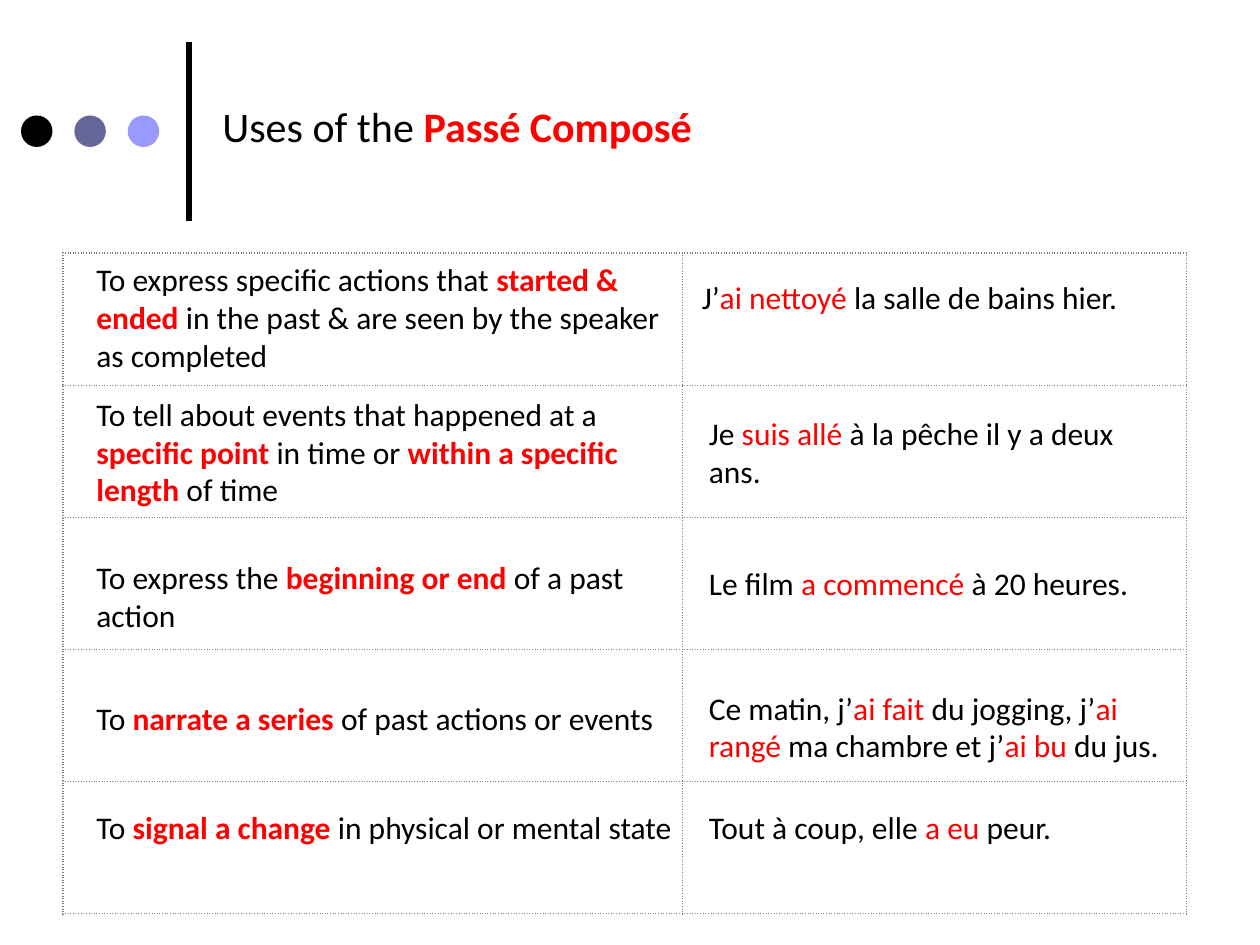
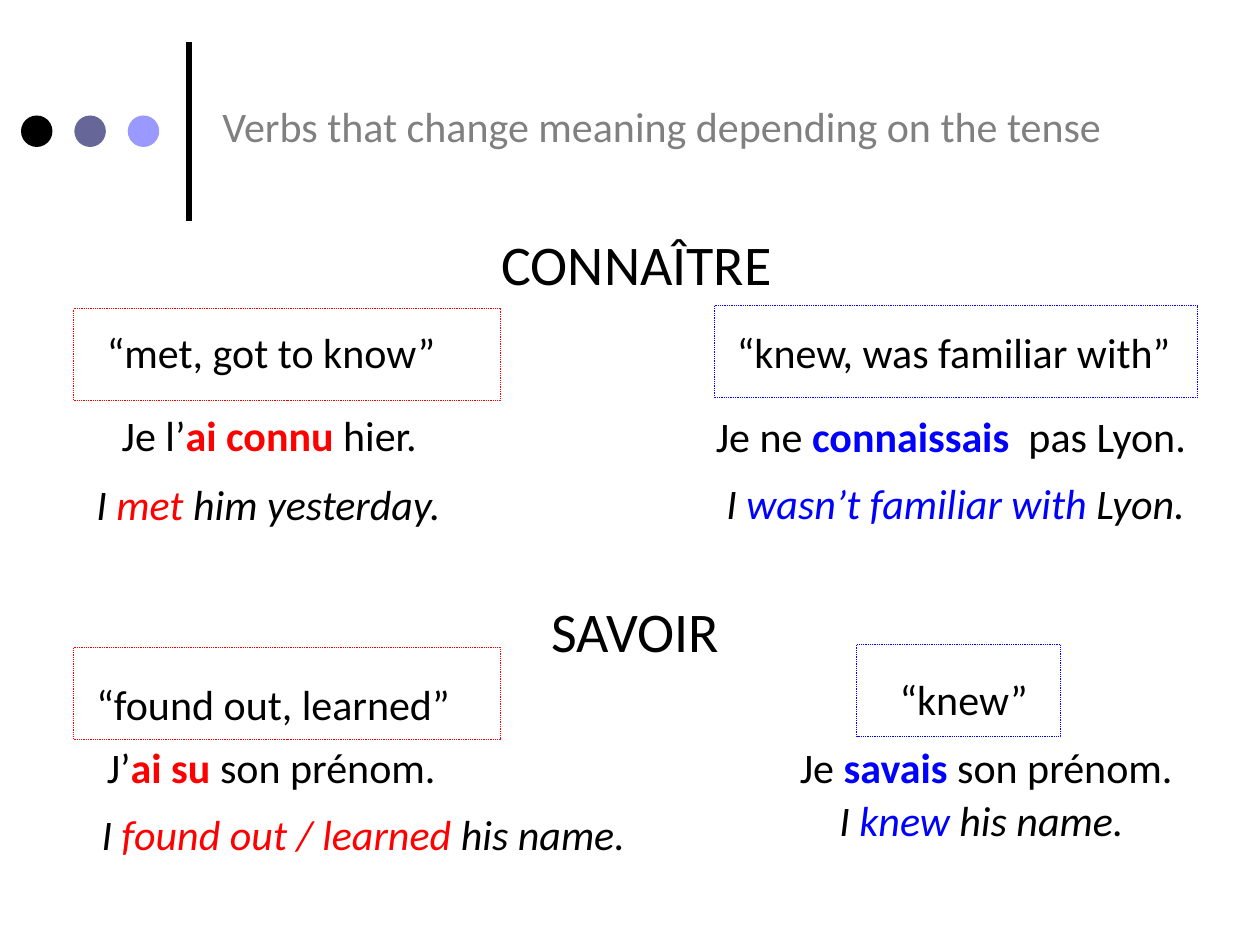
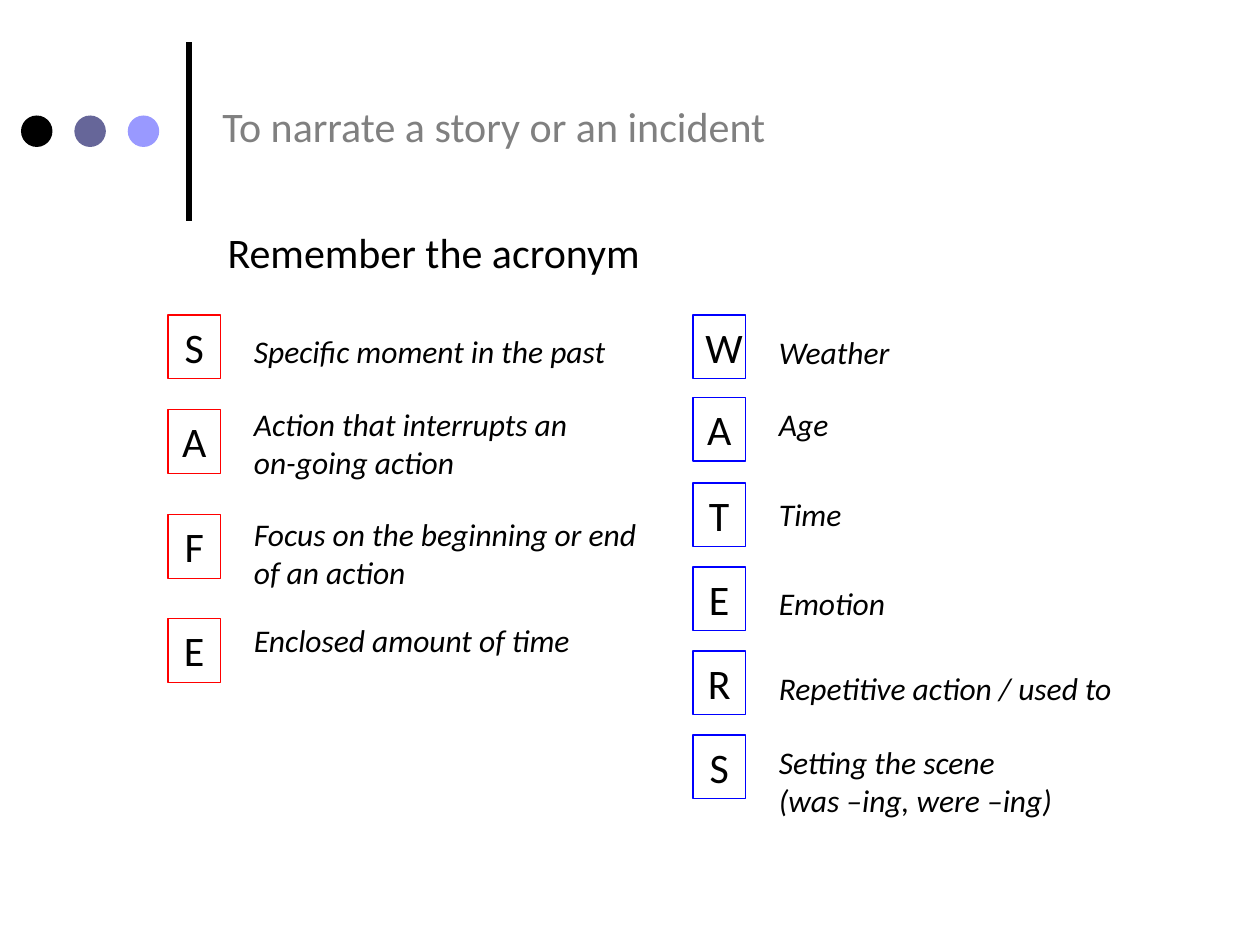
from lxml import etree
from pptx import Presentation
from pptx.dml.color import RGBColor
from pptx.enum import dml, shapes, text
from pptx.oxml import ns
from pptx.util import Pt

COLORS = {"black": "000000", "slate": "666699", "lilac": "9999FF",
          "gray": "808080", "past": "FF0000", "imperfect": "0000FF"}
FONT = "Calibri"

# Content: parts between bars are highlighted
USES_TITLE = "Uses of the |Passé Composé"
USES = [  # (top, use), (left, top, example)
    ((145, "To express specific actions that |started & ended |in the past & are seen "
           "by the speaker as completed"),
     (394, 155.5, "J’|ai nettoyé |la salle de bains hier.")),
    ((222, "To tell about events that happened at a |specific point |in time or "
           "|within a specific length |of time"),
     (398, 233, "Je |suis allé |à la pêche il y a deux ans.")),
    ((315.5, "To express the |beginning or end |of a past action"),
     (398, 319, "Le film |a commencé |à 20 heures.")),
    ((396, "To |narrate a series |of past actions or events"),
     (398, 390, "Ce matin, j’|ai fait |du jogging, j’|ai rangé |ma chambre et j’|ai bu |du jus.")),
    ((458, "To |signal a change |in physical or mental state"),
     (398, 458, "Tout à coup, elle |a eu |peur.")),
]
USES_GRID = {"left": 36, "top": 144.7, "columns": (354, 288), "row": 75.5}

VERBS_TITLE = "Verbs that change meaning depending on the tense"
VERBS = [  # infinitive, left, top, centered
    ("CONNAÎTRE", 279.5, 108.5, False),
    ("SAVOIR", 258, 318, True),
]
MEANINGS = [  # tense, frame (left, top, width), then (left, top, width, words) for each line
    ("past", (42, 176.5, 244), (54, 183, 264, "“met, got to know”"),
     (62.5, 230.5, 213, "Je l’|ai connu |hier."),
     (48, 270, 234, "I |met |him yesterday.")),
    ("imperfect", (408, 174.7, 276), (414, 183, 270, "“knew, was familiar with”"),
     (402, 231, 318, "Je ne |connaissais | pas Lyon."),
     (408, 269.5, 294, "I |wasn’t familiar with |Lyon.")),
    ("past", (42, 370, 244), (48, 384, 264, "“found out, learned”"),
     (54, 420, 232, "J’|ai su |son prénom."),
     (51, 458.5, 320, "I |found out / learned |his name.")),
    ("imperfect", (489.5, 368.5, 116.5), (507, 381.5, 108, "“knew”"),
     (450, 420, 246, "Je |savais| son prénom."),
     (472.5, 450.5, 192, "I |knew |his name.")),
]
FRAME_HEIGHT = 52.5

STORY_TITLE = "To narrate a story or an incident"
REMINDER = "Remember the acronym"
ACRONYMS = [  # tense, left, then (letter, letter top, meaning top, meaning)
    ("past", 96, [
        ("S", 180, 186, "Specific moment in the past"),
        ("A", 234, 228, "Action that interrupts an\non-going action"),
        ("F", 294, 291, "Focus on the beginning or end of an action"),
        ("E", 353.5, 351.5, "Enclosed amount of time")]),
    ("imperfect", 396, [
        ("W", 180, 187, "Weather"),
        ("A", 227, 228, "Age"),
        ("T", 276, 279.5, "Time"),
        ("E", 324, 330, "Emotion"),
        ("R", 372, 379, "Repetitive action / used to"),
        ("S", 420, 421, "Setting the scene\n(was –ing, were –ing)")]),
]


def rgb(name):
    return RGBColor.from_string(COLORS[name])


def write(shape, words, size, color="black", accent="past", bold_accent=False,
          italic=False, before=None, spacing=None, centered=False):
    frame = shape.text_frame
    frame.word_wrap = True
    frame.vertical_anchor = text.MSO_ANCHOR.TOP
    frame.auto_size = text.MSO_AUTO_SIZE.SHAPE_TO_FIT_TEXT
    for i, line in enumerate(words.split("\n")):
        paragraph = frame.add_paragraph() if i else frame.paragraphs[0]
        paragraph.alignment = text.PP_ALIGN.CENTER if centered else text.PP_ALIGN.LEFT
        if before is not None:
            paragraph.space_before = Pt(before)
        if spacing is not None:
            paragraph.line_spacing = spacing
        for j, part in enumerate(line.split("|")):
            marked = j % 2 == 1
            run = paragraph.add_run()
            run.text = part
            run.font.name = FONT
            run.font.size = Pt(size)
            run.font.bold = marked and bold_accent
            run.font.italic = italic
            run.font.color.rgb = rgb(accent if marked else color)


def add_words(slide, left, top, width, height, words, size, **style):
    box = slide.shapes.add_textbox(Pt(left), Pt(top), Pt(width), Pt(height))
    write(box, words, size, **style)


def add_outline(slide, left, top, width, height, color, weight):
    box = slide.shapes.add_shape(shapes.MSO_SHAPE.RECTANGLE,
                                 Pt(left), Pt(top), Pt(width), Pt(height))
    box.shadow.inherit = False
    box.fill.background()
    box.line.color.rgb = rgb(color)
    box.line.width = Pt(weight)
    return box


def add_slide(deck, title, color="gray"):
    """Add a slide with the shared bar, dots and title."""
    slide = deck.slides.add_slide(deck.slide_layouts[6])
    bar = slide.shapes.add_connector(shapes.MSO_CONNECTOR.STRAIGHT,
                                     Pt(108), Pt(126), Pt(108), Pt(24))
    bar.line.color.rgb = rgb("black")
    bar.line.width = Pt(3)
    etree.SubElement(bar._element.spPr, ns.qn("a:effectLst"))
    for i, dot_color in enumerate(("black", "slate", "lilac")):
        dot = slide.shapes.add_shape(shapes.MSO_SHAPE.OVAL,
                                     Pt(12 + 30.5 * i), Pt(66), Pt(18), Pt(18))
        dot.shadow.inherit = False
        dot.fill.solid()
        dot.fill.fore_color.rgb = rgb(dot_color)
        dot.line.fill.background()
    add_words(slide, 120, 54, 576, 36, title, 24, color=color, bold_accent=True)
    return slide


def dot_borders(cell):
    properties = cell._tc.get_or_add_tcPr()
    for i, side in enumerate(("lnL", "lnR", "lnT", "lnB")):
        line = etree.Element(ns.qn("a:" + side), w=str(Pt(1)))
        fill = etree.SubElement(line, ns.qn("a:solidFill"))
        etree.SubElement(fill, ns.qn("a:srgbClr"), val=COLORS["gray"])
        etree.SubElement(line, ns.qn("a:prstDash"), val="dot")
        properties.insert(i, line)


def build_uses(deck):
    slide = add_slide(deck, USES_TITLE, "black")
    columns, row_height = USES_GRID["columns"], USES_GRID["row"]
    grid = slide.shapes.add_table(
        len(USES), len(columns), Pt(USES_GRID["left"]), Pt(USES_GRID["top"]),
        Pt(sum(columns)), Pt(row_height * len(USES))).table
    grid.first_row = grid.horz_banding = False
    for column, width in zip(grid.columns, columns):
        column.width = Pt(width)
    for row in grid.rows:
        row.height = Pt(row_height)
    for cell in grid.iter_cells():
        cell.fill.background()
        dot_borders(cell)
    for (top, use), _ in USES:
        add_words(slide, 48, top, 343.5, 29, use, 18, bold_accent=True)
    for _, (left, top, example) in USES:
        add_words(slide, left, top, 272, 29, example, 18)


def build_verbs(deck):
    slide = add_slide(deck, VERBS_TITLE)
    for infinitive, left, top, centered in VERBS:
        add_words(slide, left, top, 210, 60, infinitive, 32,
                  before=6, spacing=1.5, centered=centered)
    for tense, (left, top, width), *lines in MEANINGS:
        for i, (x, y, line_width, words) in enumerate(lines):
            translation = i == 2
            add_words(slide, x, y, line_width, 36, words, 24, accent=tense, before=6,
                      bold_accent=not translation, italic=translation)
        frame = add_outline(slide, left, top, width, FRAME_HEIGHT, tense, 0.5)
        frame.line.dash_style = dml.MSO_LINE.ROUND_DOT


def build_story(deck):
    slide = add_slide(deck, STORY_TITLE)
    add_words(slide, 123, 111.5, 570, 46, REMINDER, 24, before=6, spacing=1.5)
    for tense, left, entries in ACRONYMS:
        for letter, letter_top, meaning_top, meaning in entries:
            tile = add_outline(slide, left, letter_top, 30, 36.5, tense, 0.75)
            write(tile, letter, 24, centered=True)
            add_words(slide, left + 42, meaning_top, 234, 29, meaning, 18, italic=True)


def main():
    deck = Presentation()
    deck.slide_width, deck.slide_height = Pt(720), Pt(540)
    build_uses(deck)
    build_verbs(deck)
    build_story(deck)
    deck.save("out.pptx")


if __name__ == "__main__":
    main()
